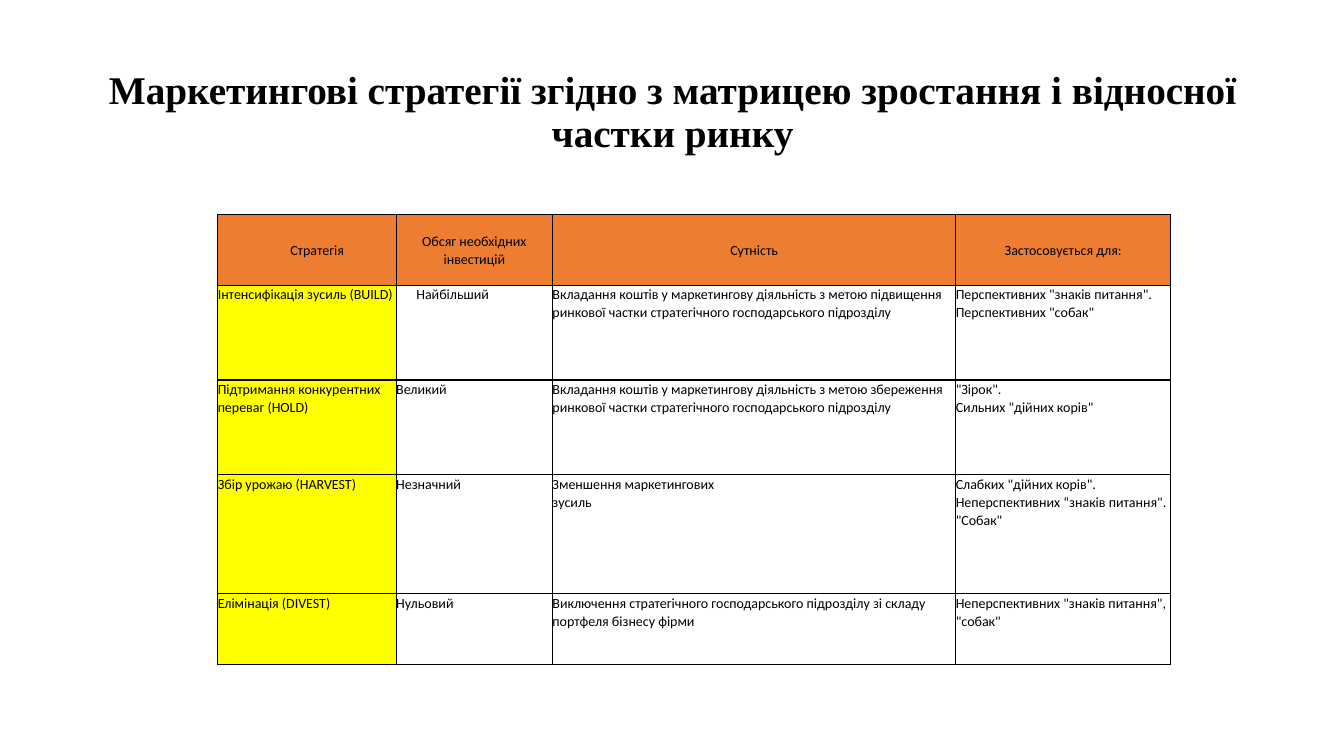
import pptx
import pptx.dml.color
import pptx.enum.text
import pptx.oxml.ns
import pptx.util
from lxml import etree

Inches = pptx.util.Inches
Pt = pptx.util.Pt
RGBColor = pptx.dml.color.RGBColor
PP_ALIGN = pptx.enum.text.PP_ALIGN
MSO_ANCHOR = pptx.enum.text.MSO_ANCHOR
qn = pptx.oxml.ns.qn

BLACK = RGBColor(0x00, 0x00, 0x00)
WHITE = RGBColor(0xFF, 0xFF, 0xFF)
ORANGE = RGBColor(0xED, 0x7D, 0x31)
YELLOW = RGBColor(0xFF, 0xFF, 0x00)

TITLE = "Маркетингові стратегії згідно з матрицею зростання і відносної частки ринку"
COLUMN_WIDTHS = [1.77, 1.55, 4, 2.13]
ROW_HEIGHTS = [0.7, 0.94, 0.94, 1.18, 0.7]
INDENTED_CELLS = {(0, 0), (1, 1)}

# Each line of a cell is a paragraph
STRATEGIES = [
    ["Стратегія", "Обсяг необхідних інвестицій", "Сутність", "Застосовується для:"],
    ["Інтенсифікація зусиль (BUILD)", "Найбільший",
     "Вкладання коштів у маркетингову діяльність з метою підвищення "
     "ринкової частки стратегічного господарського підрозділу",
     'Перспективних "знаків питання".\nПерспективних "собак"'],
    ["Підтримання конкурентних переваг (HOLD)", "Великий",
     "Вкладання коштів у маркетингову діяльність з метою збереження "
     "ринкової частки стратегічного господарського підрозділу",
     '"Зірок".\nСильних "дійних корів"'],
    ["Збір урожаю (HARVEST)", "Незначний", "Зменшення маркетингових\nзусиль",
     'Слабких "дійних корів".\nНеперспективних “знаків питання".\n"Собак"'],
    ["Елімінація (DIVEST)", "Нульовий",
     "Виключення стратегічного господарського підрозділу зі складу "
     "портфеля бізнесу фірми",
     'Неперспективних "знаків питання", "собак"'],
]


class SlideBuilder:
    title_font, title_size = "Times New Roman", Pt(28)
    table_font, table_size = "Calibri", Pt(10)
    border_width = Pt(1)
    first_line_indent = Inches(0.2)

    def __init__(self, presentation):
        self.slide = presentation.slides.add_slide(presentation.slide_layouts[5])

    def add_run(self, paragraph, text, font, size, bold=False):
        run = paragraph.add_run()
        run.text = text
        run.font.name, run.font.size, run.font.bold = font, size, bold
        run.font.color.rgb = BLACK

    def title(self, text, left, top, width, height):
        shape = self.slide.shapes.title
        shape.left, shape.top = Inches(left), Inches(top)
        shape.width, shape.height = Inches(width), Inches(height)
        frame = shape.text_frame
        frame.word_wrap = True
        frame.auto_size = pptx.enum.text.MSO_AUTO_SIZE.NONE
        frame.vertical_anchor = MSO_ANCHOR.MIDDLE
        paragraph = frame.paragraphs[0]
        paragraph.alignment = PP_ALIGN.CENTER
        paragraph.line_spacing = 0.9
        self.add_run(paragraph, text, self.title_font, self.title_size, bold=True)

    def table(self, rows, left, top, widths, heights):
        table = self.slide.shapes.add_table(
            len(rows), len(widths), Inches(left), Inches(top),
            Inches(sum(widths)), Inches(sum(heights))).table
        table.first_row = table.horz_banding = False
        for column, width in zip(table.columns, widths):
            column.width = Inches(width)
        for row, height in zip(table.rows, heights):
            row.height = Inches(height)
        for row_index, texts in enumerate(rows):
            for column_index, text in enumerate(texts):
                header = row_index == 0
                fill = ORANGE if header else YELLOW if column_index == 0 else WHITE
                indented = (row_index, column_index) in INDENTED_CELLS
                self.cell(table.cell(row_index, column_index), text, fill, header, indented)

    def cell(self, cell, text, fill, header, indented):
        cell.margin_left = cell.margin_right = 0
        cell.margin_top = cell.margin_bottom = 0
        cell.vertical_anchor = MSO_ANCHOR.MIDDLE if header else MSO_ANCHOR.TOP
        self.borders(cell)
        cell.fill.solid()
        cell.fill.fore_color.rgb = fill
        frame = cell.text_frame
        for index, line in enumerate(text.split("\n")):
            paragraph = frame.paragraphs[0] if index == 0 else frame.add_paragraph()
            paragraph.alignment = PP_ALIGN.CENTER if header else PP_ALIGN.LEFT
            paragraph.line_spacing = 1.07
            if indented:
                paragraph._p.get_or_add_pPr().set("indent", str(self.first_line_indent))
            self.add_run(paragraph, line, self.table_font, self.table_size)

    def borders(self, cell):
        properties = cell._tc.get_or_add_tcPr()
        for side in ("a:lnL", "a:lnR", "a:lnT", "a:lnB"):
            line = etree.SubElement(properties, qn(side), w=str(self.border_width))
            solid = etree.SubElement(line, qn("a:solidFill"))
            etree.SubElement(solid, qn("a:srgbClr"), val=str(BLACK))


def main():
    presentation = pptx.Presentation()
    presentation.slide_width = Inches(13.33)
    presentation.slide_height = Inches(7.5)
    builder = SlideBuilder(presentation)

    # Heading
    builder.title(TITLE, 0.92, 0.4, 11.5, 1.45)

    # Strategy table
    builder.table(STRATEGIES, 2.16, 2.13, COLUMN_WIDTHS, ROW_HEIGHTS)

    presentation.save("out.pptx")


if __name__ == "__main__":
    main()
